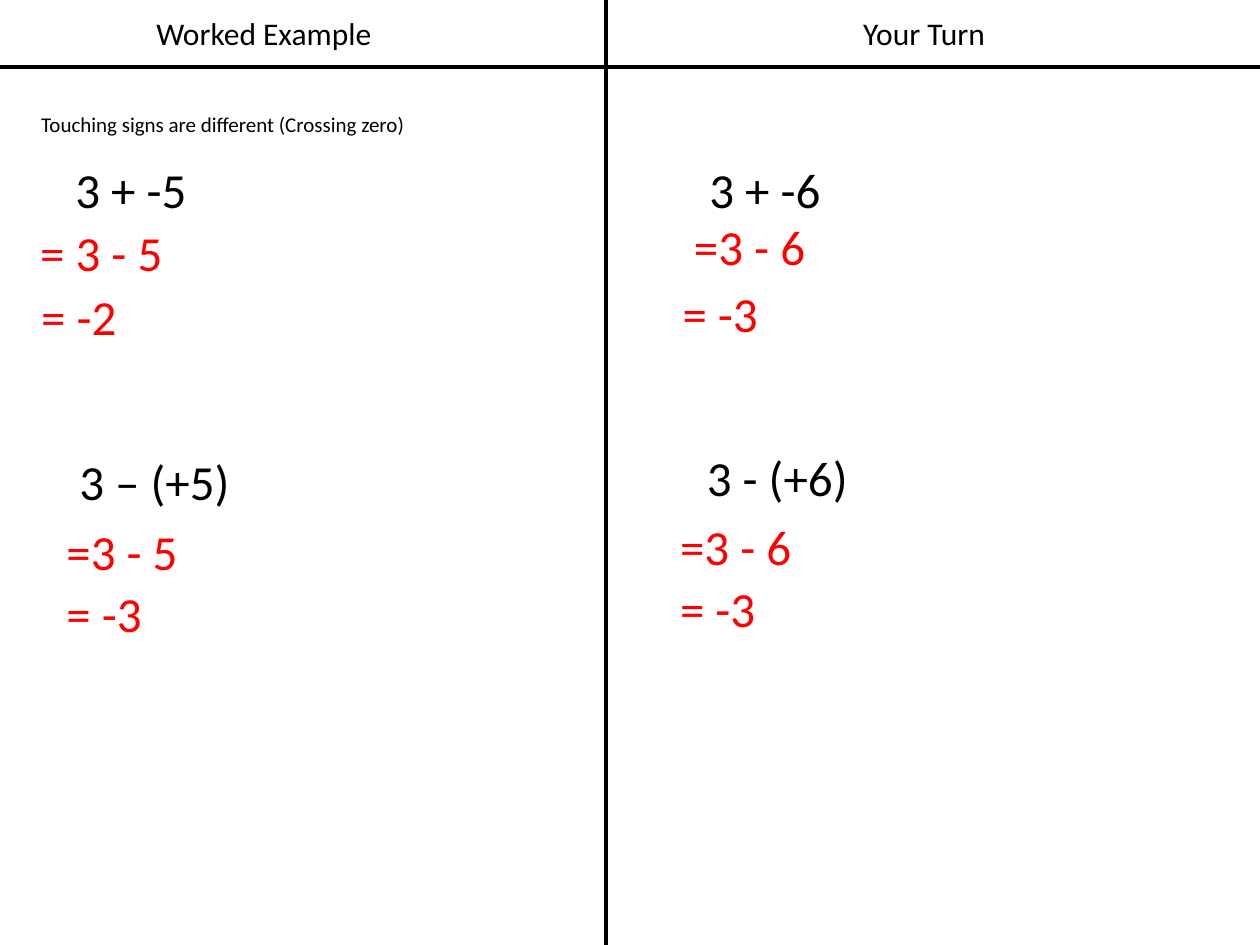
"""Build a worked example slide on adding and subtracting negative numbers."""
from lxml import etree
from pptx import Presentation
from pptx.dml.color import RGBColor
from pptx.enum.shapes import MSO_CONNECTOR
from pptx.enum.text import MSO_AUTO_SIZE, PP_ALIGN
from pptx.oxml.ns import qn
from pptx.util import Cm, Pt

STRAIGHT = MSO_CONNECTOR.STRAIGHT
LEFT, CENTER = PP_ALIGN.LEFT, PP_ALIGN.CENTER
FIT_SHAPE = MSO_AUTO_SIZE.SHAPE_TO_FIT_TEXT

FONT = "Calibri"
BLACK, RED = "000000", "FF0000"
WIDTH, HEIGHT = 25.4, 19.05
DIVIDER_X, HEADER_Y = 12.22, 1.35
STEP_WIDTH, LINE_HEIGHT = 3.86, 1.45

HEADINGS = [("Worked Example", 2.87), ("Your Turn", 16.18)]
NOTE = "Touching signs are different (Crossing zero)"
EXERCISES = [
    {"question": ("3 + -5", 1.27, 3.1, 2.79),
     "steps": [("= 3 - 5", 0.56, 4.37), ("= -2", 0.58, 5.66)]},
    {"question": ("3 + -6", 14.05, 3.1, 2.79),
     "steps": [("=3 - 6", 13.74, 4.24), ("= -3", 13.51, 5.59)]},
    {"question": ("3 – (+5)", 1.35, 8.97, 3.58),
     "steps": [("=3 - 5", 1.09, 10.39), ("= -3", 1.09, 11.63)]},
    {"question": ("3 - (+6)", 14, 8.89, 3.4),
     "steps": [("=3 - 6", 13.46, 10.29), ("= -3", 13.46, 11.53)]},
]


def color(value):
    return RGBColor.from_string(value)


def add_text(slide, text, left, top, width, height=LINE_HEIGHT, size=28,
             ink=BLACK, align=LEFT, wrap=True):
    box = slide.shapes.add_textbox(Cm(left), Cm(top), Cm(width), Cm(height))
    frame = box.text_frame
    frame.word_wrap = wrap
    frame.auto_size = FIT_SHAPE
    paragraph = frame.paragraphs[0]
    paragraph.alignment = align
    run = paragraph.add_run()
    run.text = text
    run.font.name = FONT
    run.font.size = Pt(size)
    run.font.color.rgb = color(ink)


def add_rule(slide, *ends):
    rule = slide.shapes.add_connector(STRAIGHT, *map(Cm, ends))
    rule.line.color.rgb = color(BLACK)
    rule.line.width = Pt(2.5)
    etree.SubElement(rule.element.spPr, qn("a:effectLst"))


def main():
    presentation = Presentation()
    presentation.slide_width, presentation.slide_height = Cm(WIDTH), Cm(HEIGHT)
    slide = presentation.slides.add_slide(presentation.slide_layouts[6])

    for text, left in HEADINGS:
        add_text(slide, text, left, 0.15, 4.9, 1.02, size=18, align=CENTER)
    add_rule(slide, DIVIDER_X, 0, DIVIDER_X, HEIGHT)
    add_rule(slide, 0, HEADER_Y, WIDTH, HEADER_Y)
    add_text(slide, NOTE, 0.58, 2.13, 9.63, 0.76, size=12)

    for exercise in EXERCISES:
        add_text(slide, *exercise["question"], wrap=False)
        for step in exercise["steps"]:
            add_text(slide, *step, STEP_WIDTH, ink=RED)

    presentation.save("out.pptx")


if __name__ == "__main__":
    main()
